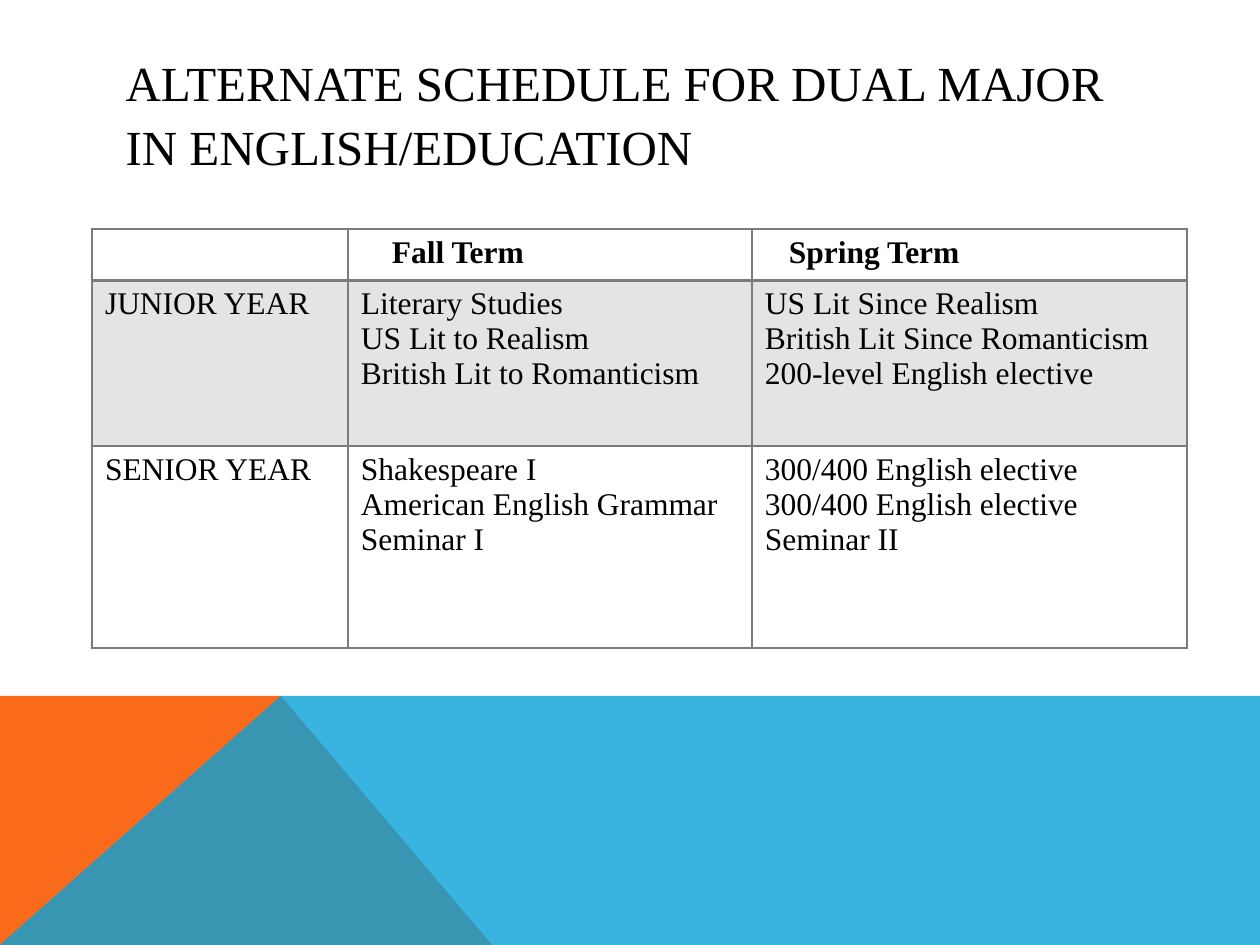
from dataclasses import dataclass

from lxml.etree import SubElement
from pptx import Presentation
from pptx.dml.color import RGBColor
from pptx.dml.fill import FillFormat
from pptx.enum.text import MSO_ANCHOR, MSO_AUTO_SIZE, PP_ALIGN
from pptx.oxml import parse_xml
from pptx.oxml.ns import nsdecls, qn
from pptx.slide import Slide
from pptx.table import _Cell
from pptx.text.text import TextFrame
from pptx.util import Pt

PX = 914400 // 126
FONT = "Times New Roman"
GREY = "797B7E"
INSET = 13


@dataclass(frozen=True)
class Band:
    points: tuple[tuple[int, int], ...]
    color: str
    opacity: int = 100


@dataclass(frozen=True)
class CellText:
    lines: tuple[str, ...] = ()
    bold: bool = False
    indent: int = 0


@dataclass(frozen=True)
class TableRow:
    height: int
    cells: tuple[CellText, ...]
    shaded: bool = False


BANDS = (
    Band(((0, 945), (0, 696), (281, 696), (492, 945)), "F96A1B"),
    Band(((0, 945), (281, 696), (1260, 696), (1260, 945)), "08A1D9", 80),
)
COLUMN_WIDTHS = (256, 404, 435)
ROWS = (
    TableRow(48, (
        CellText(),
        CellText(("Fall Term",), True, 31),
        CellText(("Spring Term",), True, 24),
    )),
    TableRow(166, (
        CellText(("JUNIOR YEAR",)),
        CellText(("Literary Studies", "US Lit to Realism", "British Lit to Romanticism")),
        CellText(("US Lit Since Realism", "British Lit Since Romanticism",
                  "200-level English elective")),
    ), True),
    TableRow(202, (
        CellText(("SENIOR YEAR",)),
        CellText(("Shakespeare I", "American English Grammar", "Seminar I")),
        CellText(("300/400 English elective", "300/400 English elective", "Seminar II")),
    )),
)


def rgb(color: str) -> RGBColor:
    return RGBColor.from_string(color)


def paint(fill: FillFormat, color: str, parent, opacity: int) -> None:
    fill.solid()
    fill.fore_color.rgb = rgb(color)
    if opacity < 100:
        color_node = parent.find(qn("a:solidFill")).find(qn("a:srgbClr"))
        SubElement(color_node, qn("a:alpha"), val=str(opacity * 1000))


def write_lines(frame: TextFrame, lines: tuple[str, ...], size: int, bold: bool = False) -> None:
    for index, line in enumerate(lines):
        paragraph = frame.add_paragraph() if index else frame.paragraphs[0]
        paragraph.alignment = PP_ALIGN.LEFT
        run = paragraph.add_run()
        run.text = line
        run.font.name = FONT
        run.font.size = Pt(size)
        run.font.bold = bold
        run.font.color.rgb = rgb("000000")


def draw_band(slide: Slide, band: Band) -> None:
    builder = slide.shapes.build_freeform(*band.points[0], scale=PX)
    builder.add_line_segments(band.points[1:], close=True)
    shape = builder.convert_to_shape()
    shape.shadow.inherit = False
    shape.line.fill.background()
    paint(shape.fill, band.color, shape._element.spPr, band.opacity)


def draw_title(slide: Slide, text: str) -> None:
    title = slide.shapes.title
    title.left, title.top, title.width, title.height = (
        value * PX for value in (113, 50, 1036, 122))
    frame = title.text_frame
    frame.word_wrap = True
    frame.auto_size = MSO_AUTO_SIZE.NONE
    frame.vertical_anchor = MSO_ANCHOR.MIDDLE
    write_lines(frame, (text,), 28)
    frame.paragraphs[0].line_spacing = 1.09


def set_borders(cell: _Cell, widths: dict[str, int]) -> None:
    properties = cell._tc.get_or_add_tcPr()
    for index, (side, width) in enumerate(widths.items()):
        properties.insert(index, parse_xml(
            f'<a:ln{side} {nsdecls("a")} w="{Pt(width)}"><a:solidFill>'
            f'<a:srgbClr val="{GREY}"/></a:solidFill></a:ln{side}>'))


def draw_table(slide: Slide, left: int, top: int) -> None:
    width, height = sum(COLUMN_WIDTHS), sum(row.height for row in ROWS)
    table = slide.shapes.add_table(
        len(ROWS), len(COLUMN_WIDTHS), left * PX, top * PX, width * PX, height * PX).table
    table.first_row = table.horz_banding = False
    for column, column_width in zip(table.columns, COLUMN_WIDTHS):
        column.width = column_width * PX
    for row_index, row in enumerate(ROWS):
        table.rows[row_index].height = row.height * PX
        for column_index, content in enumerate(row.cells):
            cell = table.cell(row_index, column_index)
            cell.margin_left = (INSET + content.indent) * PX
            write_lines(cell.text_frame, content.lines, 18, content.bold)
            if row.shaded:
                paint(cell.fill, GREY, cell._tc.get_or_add_tcPr(), 20)
            else:
                cell.fill.background()
            set_borders(cell, {"L": 1, "R": 1,
                               "T": 2 if row_index == 1 else 1,
                               "B": 2 if row_index == 0 else 1})


def main() -> None:
    """Build the dual major schedule slide."""
    presentation = Presentation()
    presentation.slide_width, presentation.slide_height = 1260 * PX, 945 * PX
    slide = presentation.slides.add_slide(presentation.slide_layouts[5])
    for band in BANDS:
        draw_band(slide, band)
    draw_title(slide, "ALTERNATE SCHEDULE FOR DUAL MAJOR IN ENGLISH/EDUCATION")
    draw_table(slide, 92, 229)
    presentation.save("out.pptx")


if __name__ == "__main__":
    main()
